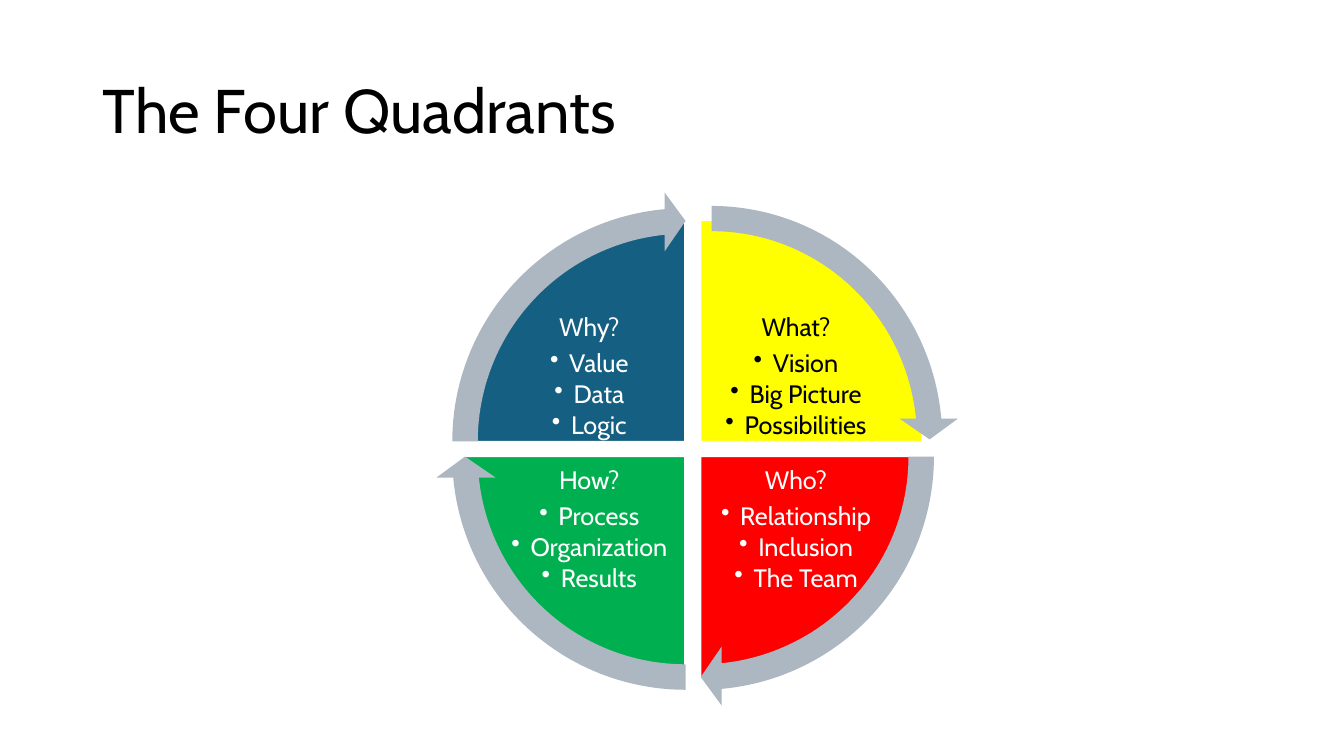
import pptx
import pptx.util
from dataclasses import dataclass
from lxml import etree
from pptx.dml.color import RGBColor
from pptx.enum.shapes import MSO_SHAPE
from pptx.enum.text import MSO_ANCHOR, PP_ALIGN
from pptx.oxml.ns import qn
from pptx.util import Inches, Pt

# Content, clockwise from the upper right:
# question, points, fill, text colour, column, row, arrow frame
TITLE = "The Four Quadrants"
QUADRANTS = [
    ("What?", ["Vision", "Big Picture", "Possibilities"],
     "FFFF00", "000000", 1, 0, (4.61, 1.88, 4.9, 4.96)),
    ("Who?", ["Relationship", "Inclusion", "The Team"],
     "FF0000", "FFFFFF", 1, 1, (4.47, 2.05, 4.96, 4.96)),
    ("How?", ["Process", "Organization", "Results"],
     "00B050", "FFFFFF", 0, 1, (4.32, 2.05, 4.96, 4.96)),
    ("Why?", ["Value", "Data", "Logic"],
     "156082", "FFFFFF", 0, 0, (4.32, 1.9, 4.96, 4.96)),
]


@dataclass(frozen=True)
class Theme:
    font: str = "Cabin"
    title_size: float = 44
    text_size: float = 18
    title_color: str = "000000"
    outline: str = "FFFFFF"
    arrow: str = "ACB7C1"


THEME = Theme()

# Geometry in inches; angles in shape adjustment units
PIE_LEFT, PIE_TOP, PIE_SIZE = (4.59, 4.74), (2.18, 2.32), 4.41
TEXT_LEFT, TEXT_TOP, TEXT_SIZE = (5.03, 7.08), (3.09, 4.61), (1.63, 1.21)
TEXT_INSET, BULLET_INDENT = 0.03, 0.19
FULL_TURN, QUARTER, FIRST_START = 216, 54, 162
ARROW_WIDTH, ARROW_TIP, ARROW_HEAD = 0.051, 3.275, 0.059


def add_shape(parent, kind, frame, fill, adjustments):
    shape = parent.shapes.add_shape(kind, *map(Inches, frame))
    shape.shadow.inherit = False
    shape.fill.solid()
    shape.fill.fore_color.rgb = RGBColor.from_string(fill)
    shape.line.fill.background()
    for index, value in enumerate(adjustments):
        shape.adjustments[index] = value
    return shape


def add_text_box(parent, frame, inset=None):
    box = parent.shapes.add_textbox(*map(Inches, frame))
    text = box.text_frame
    text.word_wrap = True
    if inset is not None:
        text.margin_left = text.margin_right = Inches(inset)
        text.margin_top = text.margin_bottom = Inches(inset)
    return text


def write(para, words, size, color):
    para.line_spacing = 0.9
    span = para.add_run()
    span.text = words
    span.font.name = THEME.font
    span.font.size = Pt(size)
    span.font.color.rgb = RGBColor.from_string(color)


def add_bullet(para):
    para.level = 1
    properties = para._p.get_or_add_pPr()
    properties.set("marL", str(Inches(BULLET_INDENT)))
    properties.set("indent", str(-Inches(BULLET_INDENT)))
    etree.SubElement(properties, qn("a:buChar")).set("char", "•")


def add_quadrant(parent, quadrant, start):
    question, points, fill, color, column, row, _ = quadrant
    pie = add_shape(parent, MSO_SHAPE.PIE,
                    (PIE_LEFT[column], PIE_TOP[row], PIE_SIZE, PIE_SIZE),
                    fill, (start, (start + QUARTER) % FULL_TURN))
    pie.line.color.rgb = RGBColor.from_string(THEME.outline)
    pie.line.width = Pt(1.5)

    text = add_text_box(parent, (TEXT_LEFT[column], TEXT_TOP[row], *TEXT_SIZE),
                        TEXT_INSET)
    heading = text.paragraphs[0]
    heading.alignment = PP_ALIGN.CENTER
    heading.space_after = Pt(6.3)
    write(heading, question, THEME.text_size, color)
    for point in points:
        para = text.add_paragraph()
        add_bullet(para)
        para.alignment = PP_ALIGN.CENTER
        para.space_after = Pt(2.7)
        write(para, point, THEME.text_size, color)


def main():
    deck = pptx.Presentation()
    deck.slide_width, deck.slide_height = Inches(13.33), Inches(7.5)
    page = deck.slides.add_slide(deck.slide_layouts[6])

    # Title
    title = add_text_box(page, (0.92, 0.4, 11.5, 1.45))
    title.vertical_anchor = MSO_ANCHOR.MIDDLE
    write(title.paragraphs[0], TITLE, THEME.title_size, THEME.title_color)

    # Wheel: quadrants first, arrows on top
    wheel = page.shapes.add_group_shape()
    starts = [(FIRST_START + QUARTER * step) % FULL_TURN
              for step in range(len(QUADRANTS))]
    for quadrant, start in zip(QUADRANTS, starts):
        add_quadrant(wheel, quadrant, start)
    for quadrant, start in zip(QUADRANTS, starts):
        end = start + QUARTER - ARROW_TIP
        add_shape(wheel, MSO_SHAPE.CIRCULAR_ARROW, quadrant[-1], THEME.arrow,
                  (ARROW_WIDTH, ARROW_TIP, end, start, ARROW_HEAD))

    deck.save("out.pptx")


if __name__ == "__main__":
    main()
